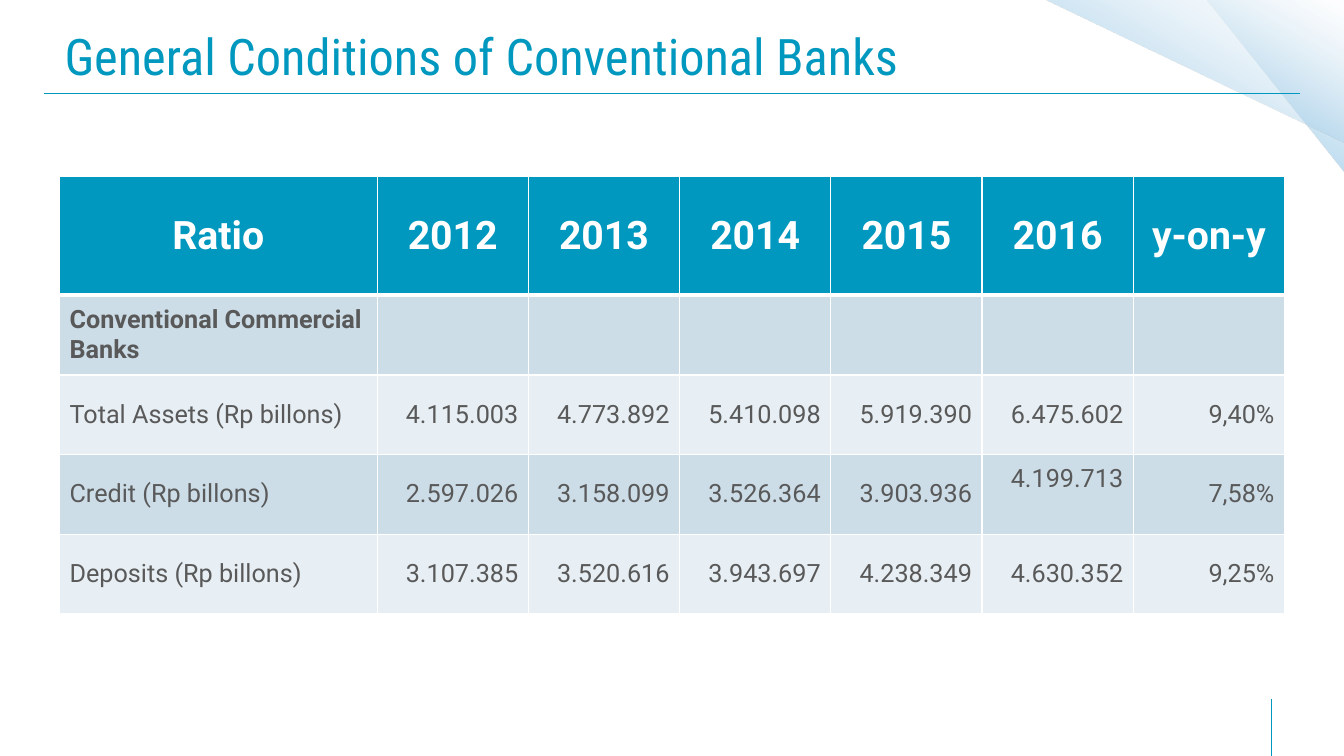
from lxml import etree
from pptx import Presentation
from pptx.dml.color import RGBColor
from pptx.enum.shapes import MSO_CONNECTOR, MSO_SHAPE
from pptx.enum.text import MSO_ANCHOR as ANCHOR, PP_ALIGN as ALIGN
from pptx.oxml import parse_xml
from pptx.oxml.ns import nsdecls, qn
from pptx.util import Inches, Pt

TEAL = RGBColor(0x00, 0x98, 0xBF)
WHITE = RGBColor(0xFF, 0xFF, 0xFF)
GRAY = RGBColor(0x59, 0x59, 0x59)
BAND_DARK = RGBColor(0xCC, 0xDD, 0xE8)
BAND_LIGHT = RGBColor(0xE7, 0xEF, 0xF4)
# Position %, colour, opacity %
CORNER_STOPS = [
    (0, RGBColor(0x8F, 0xC8, 0xE8), 100),
    (50, RGBColor(0xA4, 0xCE, 0xE9), 44),
    (100, RGBColor(0xDE, 0xED, 0xF6), 0),
]

COL_WIDTHS = [3.15] + [1.5] * 6
ROW_HEIGHTS = [1.18] + [0.79] * 4
ROWS = [
    ["Ratio", "2012", "2013", "2014", "2015", "2016", "y-on-y"],
    ["Conventional Commercial Banks"] + [""] * 6,
    ["Total Assets (Rp billons)", "4.115.003", "4.773.892", "5.410.098",
     "5.919.390", "6.475.602", "9,40%"],
    ["Credit (Rp billons)", "2.597.026", "3.158.099", "3.526.364",
     "3.903.936", "4.199.713", "7,58%"],
    ["Deposits (Rp billons)", "3.107.385", "3.520.616", "3.943.697",
     "4.238.349", "4.630.352", "9,25%"],
]
RAISED_CELL = (3, 5)  # this value sits above the middle of its row


def set_text(tf, text, size=18, color=GRAY, font="Roboto", bold=False, align=ALIGN.LEFT):
    p = tf.paragraphs[0]
    p.alignment = align
    r = p.add_run()
    r.text = text
    r.font.size = Pt(size)
    r.font.name = font
    r.font.bold = bold
    r.font.color.rgb = color


def add_corner(slide, left, top, width, height):
    sp = slide.shapes.add_shape(MSO_SHAPE.RIGHT_TRIANGLE, Inches(left), Inches(top),
                                Inches(width), Inches(height))
    sp.rotation = 180
    sp.shadow.inherit = False
    sp.line.fill.background()
    stops = "".join(
        f'<a:gs pos="{pos * 1000}"><a:srgbClr val="{color}">'
        f'<a:alpha val="{alpha * 1000}"/></a:srgbClr></a:gs>'
        for pos, color, alpha in CORNER_STOPS)
    gradient = parse_xml(
        f'<a:gradFill {nsdecls("a")} rotWithShape="1"><a:gsLst>{stops}</a:gsLst>'
        '<a:lin ang="7200000" scaled="0"/></a:gradFill>')
    sp._element.spPr.find(qn("a:prstGeom")).addnext(gradient)


def add_rule(slide, x1, y1, x2, y2):
    line = slide.shapes.add_connector(MSO_CONNECTOR.STRAIGHT, Inches(x1), Inches(y1),
                                      Inches(x2), Inches(y2))
    line.line.color.rgb = TEAL
    line.line.width = Pt(1)
    etree.SubElement(line._element.spPr, qn("a:effectLst"))


def add_title(slide, text):
    box = slide.shapes.add_textbox(Inches(0.46), Inches(0.14), Inches(12.21), Inches(0.82))
    tf = box.text_frame
    tf.word_wrap = True
    tf.vertical_anchor = ANCHOR.MIDDLE
    tf.margin_left = tf.margin_right = Inches(0.18)
    tf.margin_top = tf.margin_bottom = Inches(0.09)
    set_text(tf, text, size=36, color=TEAL, font="Roboto Condensed")


def set_borders(cell, **widths):
    """Give the cell white borders; widths in points by side L, R, T, B."""
    tc_pr = cell._tc.get_or_add_tcPr()
    for i, (side, width) in enumerate(widths.items()):
        tc_pr.insert(i, parse_xml(
            f'<a:ln{side} {nsdecls("a")} w="{Pt(width)}"><a:solidFill>'
            f'<a:srgbClr val="{WHITE}"/></a:solidFill></a:ln{side}>'))


def fill_cell(cell, row, col, text):
    header = row == 0
    cell.vertical_anchor = ANCHOR.MIDDLE
    cell.fill.solid()
    cell.fill.fore_color.rgb = TEAL if header else BAND_DARK if row % 2 else BAND_LIGHT
    set_borders(cell, L=1, R=1, T=3 if row == 1 else 1, B=3 if header else 1)
    if (row, col) == RAISED_CELL:
        cell.margin_bottom = Inches(0.35)
    if header:
        set_text(cell.text_frame, text, size=28, color=WHITE, bold=True, align=ALIGN.CENTER)
    elif text:
        set_text(cell.text_frame, text, bold=row == 1,
                 align=ALIGN.RIGHT if col else ALIGN.LEFT)


def add_ratio_table(slide):
    table = slide.shapes.add_table(
        len(ROWS), len(COL_WIDTHS), Inches(0.59), Inches(1.75),
        Inches(sum(COL_WIDTHS)), Inches(sum(ROW_HEIGHTS))).table
    for column, width in zip(table.columns, COL_WIDTHS):
        column.width = Inches(width)
    for row, (values, height) in enumerate(zip(ROWS, ROW_HEIGHTS)):
        table.rows[row].height = Inches(height)
        for col, text in enumerate(values):
            fill_cell(table.cell(row, col), row, col, text)


def main():
    prs = Presentation()
    prs.slide_width = Inches(13.33)
    prs.slide_height = Inches(7.5)
    slide = prs.slides.add_slide(prs.slide_layouts[6])

    # Corner decoration
    add_corner(slide, 11.97, 0, 1.36, 1.71)
    add_corner(slide, 10.36, 0, 2.99, 1.42)

    # Rules under the title and at the bottom right
    add_rule(slide, 0.44, 0.93, 12.89, 0.93)
    add_rule(slide, 12.61, 7.5, 12.61, 6.93)

    # Content
    add_title(slide, "General Conditions of Conventional Banks")
    add_ratio_table(slide)

    prs.save("out.pptx")


if __name__ == "__main__":
    main()
